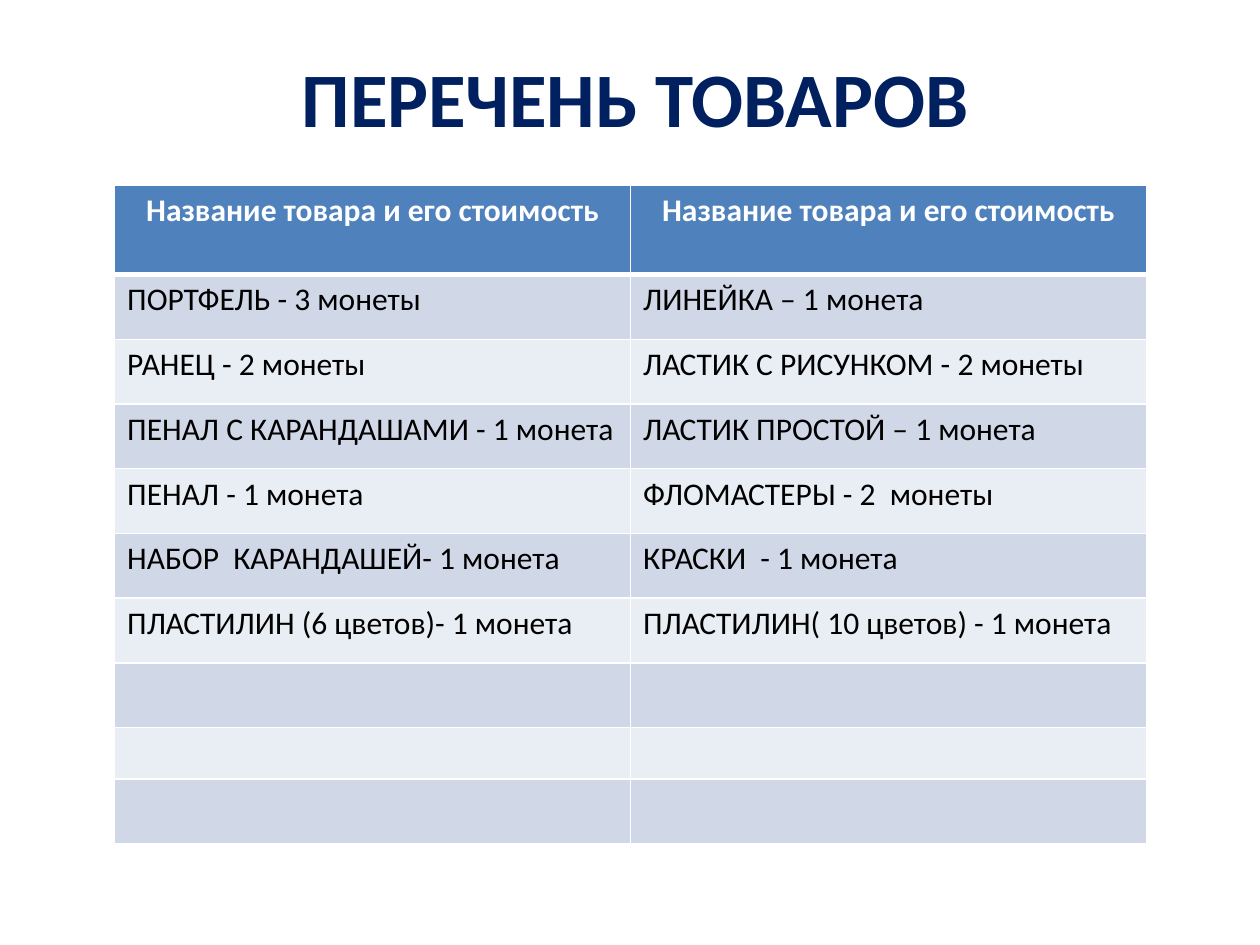
from dataclasses import dataclass

from lxml.etree import SubElement
from pptx import Presentation
from pptx.dml.color import RGBColor
from pptx.enum.text import MSO_ANCHOR, PP_ALIGN
from pptx.oxml.ns import qn
from pptx.util import Inches, Pt

NAVY = RGBColor(0x00, 0x20, 0x60)
BLUE = RGBColor(0x4F, 0x81, 0xBD)
BAND_DARK = RGBColor(0xD0, 0xD8, 0xE8)
BAND_LIGHT = RGBColor(0xE9, 0xED, 0xF4)
WHITE = RGBColor(0xFF, 0xFF, 0xFF)
BLACK = RGBColor(0x00, 0x00, 0x00)
FONT = "Calibri"

HEADER = "Название товара и его стоимость"
GOODS = [
    ("ПОРТФЕЛЬ - 3 монеты", "ЛИНЕЙКА – 1 монета"),
    ("РАНЕЦ - 2 монеты", "ЛАСТИК С РИСУНКОМ - 2 монеты"),
    ("ПЕНАЛ С КАРАНДАШАМИ - 1 монета", "ЛАСТИК ПРОСТОЙ – 1 монета"),
    ("ПЕНАЛ - 1 монета", "ФЛОМАСТЕРЫ - 2  монеты"),
    ("НАБОР  КАРАНДАШЕЙ- 1 монета", "КРАСКИ  - 1 монета"),
    ("ПЛАСТИЛИН (6 цветов)- 1 монета", "ПЛАСТИЛИН( 10 цветов) - 1 монета"),
]
EMPTY_ROWS = 3


@dataclass(frozen=True)
class Box:
    left: float
    top: float
    width: float
    height: float

    def emu(self) -> list[int]:
        return [Inches(v) for v in (self.left, self.top, self.width, self.height)]


@dataclass(frozen=True)
class CellStyle:
    fill: RGBColor
    color: RGBColor = BLACK
    bold: bool = False
    align: PP_ALIGN = PP_ALIGN.LEFT
    top: float = 1
    bottom: float = 1


TITLE_BOX = Box(0.59, 0.3, 8.91, 0.93)
TABLE_BOX = Box(0.91, 1.47, 8.19, 5.23)
HEADER_HEIGHT = 0.71
SHORT_HEIGHT = 0.41
SHORT_ROW = 8


def style_for(row: int) -> CellStyle:
    if row == 0:
        return CellStyle(BLUE, WHITE, True, PP_ALIGN.CENTER, bottom=3)
    return CellStyle(BAND_DARK if row % 2 else BAND_LIGHT, top=3 if row == 1 else 1)


def add_border(tc_pr, side: str, points: float) -> None:
    ln = SubElement(tc_pr, qn(f"a:ln{side}"), w=str(Pt(points)))
    fill = SubElement(ln, qn("a:solidFill"))
    SubElement(fill, qn("a:srgbClr"), val=str(WHITE))


def fill_cell(cell, text: str, style: CellStyle) -> None:
    tc_pr = cell._tc.get_or_add_tcPr()
    for side, points in (("L", 1), ("R", 1), ("T", style.top), ("B", style.bottom)):
        add_border(tc_pr, side, points)
    cell.fill.solid()
    cell.fill.fore_color.rgb = style.fill
    cell.text = text
    p = cell.text_frame.paragraphs[0]
    p.alignment = style.align
    p.font.name, p.font.size, p.font.bold = FONT, Pt(18), style.bold
    p.font.color.rgb = style.color


def set_title(slide, text: str) -> None:
    sp = slide.shapes.title
    sp.left, sp.top, sp.width, sp.height = TITLE_BOX.emu()
    tf = sp.text_frame
    tf.text = text
    tf.vertical_anchor = MSO_ANCHOR.MIDDLE
    p = tf.paragraphs[0]
    p.alignment = PP_ALIGN.CENTER
    p.font.name, p.font.size, p.font.bold = FONT, Pt(44), True
    p.font.color.rgb = NAVY


def add_goods_table(slide) -> None:
    rows = [(HEADER, HEADER), *GOODS, *[("", "")] * EMPTY_ROWS]
    table = slide.shapes.add_table(len(rows), 2, *TABLE_BOX.emu()).table
    body_height = (TABLE_BOX.height - HEADER_HEIGHT - SHORT_HEIGHT) / (len(rows) - 2)
    heights = {0: HEADER_HEIGHT, SHORT_ROW: SHORT_HEIGHT}
    for r, texts in enumerate(rows):
        table.rows[r].height = Inches(heights.get(r, body_height))
        for c, text in enumerate(texts):
            fill_cell(table.cell(r, c), text, style_for(r))


def main() -> None:
    prs = Presentation()
    prs.slide_width, prs.slide_height = Inches(10), Inches(7.5)
    slide = prs.slides.add_slide(prs.slide_layouts.get_by_name("Title Only"))
    set_title(slide, "ПЕРЕЧЕНЬ ТОВАРОВ")
    add_goods_table(slide)
    prs.save("out.pptx")


if __name__ == "__main__":
    main()
